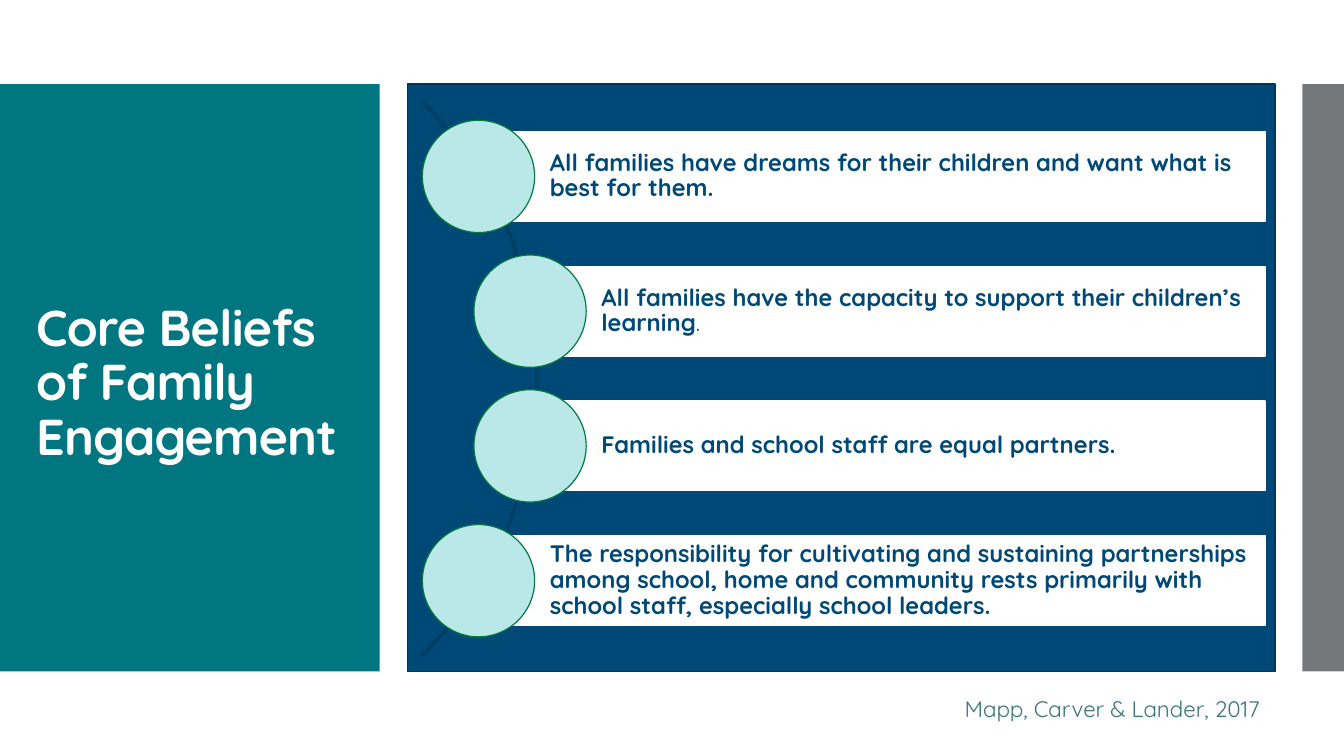
"""Build the slide on core beliefs of family engagement."""
from pptx import Presentation
from pptx.dml.color import RGBColor
from pptx.enum.shapes import MSO_SHAPE as Preset
from pptx.enum.text import MSO_ANCHOR as Anchor, PP_ALIGN as Align
from pptx.util import Pt

TITLE = "Core Beliefs of Family Engagement"
BELIEFS = [
    (0, [("All families have dreams for their children and want what is best for them.", True)]),
    (1, [("All families have the capacity to support their children’s learning", True), (".", False)]),
    (1, [("Families and school staff are equal partners.", True)]),
    (0, [("The responsibility for cultivating and sustaining partnerships among school, "
          "home and community rests primarily with school staff, especially school leaders.", True)]),
]
CITATION = "Mapp, Carver & Lander, 2017"

FONT = "Quicksand"
WHITE = RGBColor(0xFF, 0xFF, 0xFF)
NAVY = RGBColor(0x00, 0x49, 0x76)
NAVY_EDGE = RGBColor(0x00, 0x36, 0x57)
ARC_EDGE = RGBColor(0x00, 0x3A, 0x5E)
TEAL = RGBColor(0x00, 0x76, 0x81)
GRAY = RGBColor(0x75, 0x78, 0x7B)
MINT = RGBColor(0xBA, 0xE8, 0xE8)
GREEN = RGBColor(0x00, 0x7A, 0x3E)
CITATION_TEAL = RGBColor(0x3A, 0x75, 0x7A)

SLIDE_W, SLIDE_H = 960, 540
BAND_TOP, BAND_H = 60, 419.6
BANDS = [
    (290.9, 619.9, NAVY, NAVY_EDGE),
    (0, 271.2, TEAL, None),
    (930.2, 29.8, GRAY, None),
]
ARC_X, ARC_Y, ARC_RADIUS = 104, 270.4, 280.4
ARC_ADJUSTMENTS = (189, 27, 0.003)
ROW_STEP = 96.25
ROW_X = (341.8, 378.6)
CARD_RIGHT, CARD_H = 903.6, 64.2
CIRCLE = 80.2


def add_part(shapes, preset, box, fill, edge):
    part = shapes.add_shape(preset, *map(Pt, box))
    part.shadow.inherit = False
    for paint, color in ((part.fill, fill), (part.line.fill, edge)):
        if color is None:
            paint.background()
        else:
            paint.solid()
            paint.fore_color.rgb = color
    if edge is not None:
        part.line.width = Pt(0.85)
    return part


def write(part, runs, size, color, spacing, frame_format):
    frame = part.text_frame
    for key, value in {"word_wrap": True, **frame_format}.items():
        setattr(frame, key, value)
    paragraph = frame.paragraphs[0]
    paragraph.alignment = Align.LEFT
    paragraph.line_spacing = spacing
    for text, bold in runs:
        run = paragraph.add_run()
        run.text = text
        for key, value in {"name": FONT, "size": Pt(size), "bold": bold}.items():
            setattr(run.font, key, value)
        run.font.color.rgb = color
    return paragraph


def main():
    deck = Presentation()
    deck.slide_width, deck.slide_height = Pt(SLIDE_W), Pt(SLIDE_H)
    shapes = deck.slides.add_slide(deck.slide_layouts[6]).shapes

    for left, width, fill, edge in BANDS:
        add_part(shapes, Preset.RECTANGLE, (left, BAND_TOP, width, BAND_H), fill, edge)

    title = shapes.add_textbox(Pt(18.7), Pt(93.6), Pt(241.9), Pt(362.2))
    heading = write(title, [(TITLE, True)], 36, WHITE, 0.9, {"vertical_anchor": Anchor.MIDDLE})
    heading.runs[0].font._element.set("spc", "-60")

    arc_box = (ARC_X - ARC_RADIUS, ARC_Y - ARC_RADIUS, 2 * ARC_RADIUS, 2 * ARC_RADIUS)
    arc = add_part(shapes, Preset.BLOCK_ARC, arc_box, None, ARC_EDGE)
    for index, value in enumerate(ARC_ADJUSTMENTS):
        arc.adjustments[index] = value

    card_format = {"vertical_anchor": Anchor.MIDDLE, "margin_left": Pt(51),
                   "margin_right": Pt(3.6), "margin_top": Pt(3.6), "margin_bottom": Pt(3.6)}
    for row, (indent, runs) in enumerate(BELIEFS):
        x = ROW_X[indent]
        y = ARC_Y + (row - (len(BELIEFS) - 1) / 2) * ROW_STEP
        card_box = (x, y - CARD_H / 2, CARD_RIGHT - x, CARD_H)
        card = add_part(shapes, Preset.RECTANGLE, card_box, WHITE, WHITE)
        write(card, runs, 17, NAVY, 0.9, card_format)
        circle_box = (x - CIRCLE / 2, y - CIRCLE / 2, CIRCLE, CIRCLE)
        add_part(shapes, Preset.OVAL, circle_box, MINT, GREEN)

    citation = shapes.add_textbox(Pt(682), Pt(493.2), Pt(258.3), Pt(26.6))
    write(citation, [(CITATION, False)], 16, CITATION_TEAL, 1.0, {})

    deck.save("out.pptx")


if __name__ == "__main__":
    main()
